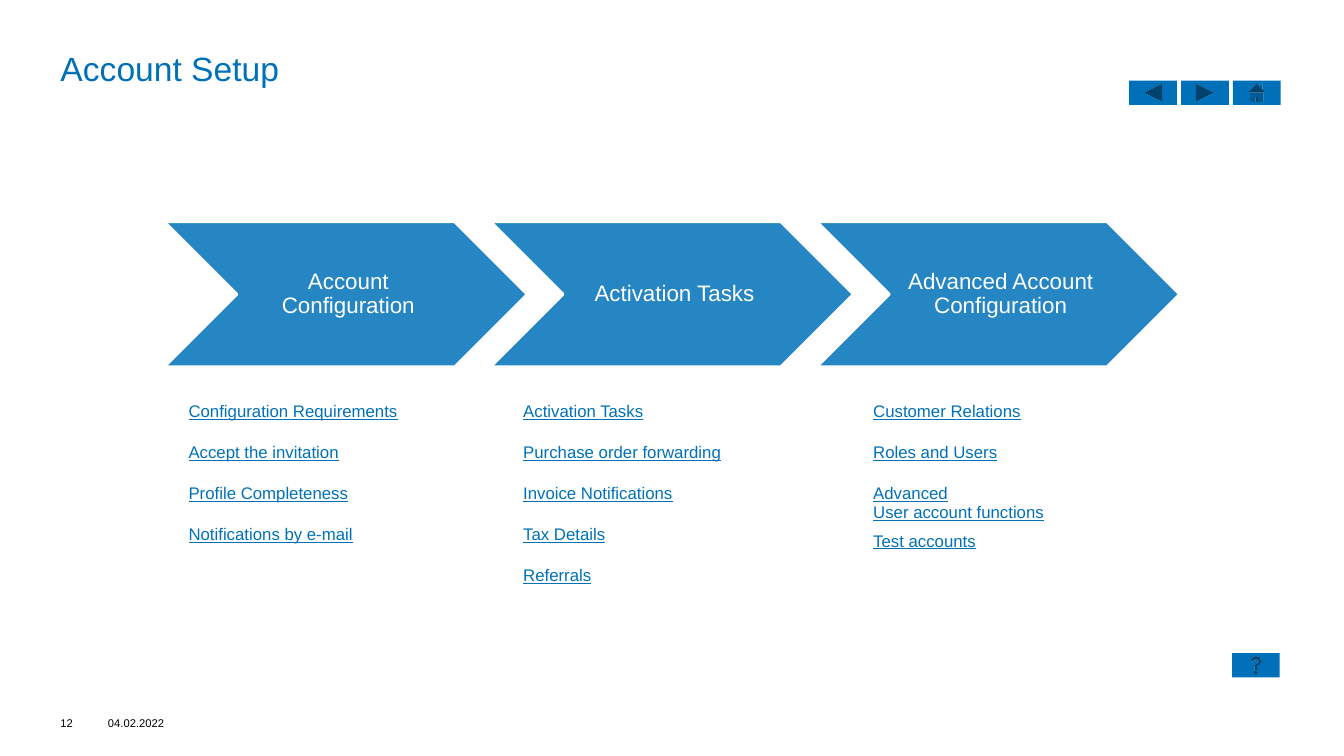
from pptx import Presentation
from pptx.dml.color import RGBColor
from pptx.enum.shapes import MSO_SHAPE as Shape
from pptx.enum.text import MSO_ANCHOR as Anchor, MSO_AUTO_SIZE as Fit, PP_ALIGN as Align
from pptx.util import Inches, Pt

BLUE = RGBColor(0x00, 0x71, 0xB9)
SKY = RGBColor(0x25, 0x86, 0xC3)
WHITE = RGBColor(0xFF, 0xFF, 0xFF)
BLACK = RGBColor(0x00, 0x00, 0x00)

WIDE, HIGH = Inches(13.33), Inches(7.5)
COLS, ROWS = 100, 75

STEPS = [
    ("Account Configuration", 13.28, [
        "Configuration Requirements", "Accept the invitation",
        "Profile Completeness", "Notifications by e-mail"]),
    ("Activation Tasks", 38.18, [
        "Activation Tasks", "Purchase order forwarding",
        "Invoice Notifications", "Tax Details", "Referrals"]),
    ("Advanced Account Configuration", 64.22, [
        "Customer Relations", "Roles and Users",
        "Advanced\nUser account functions", "Test accounts"]),
]
NAV = [Shape.ACTION_BUTTON_BACK_OR_PREVIOUS,
       Shape.ACTION_BUTTON_FORWARD_OR_NEXT,
       Shape.ACTION_BUTTON_HOME]


class Page:
    """Draws on one slide; places are columns and rows of the grid."""
    face = "Arial"

    def __init__(self, deck):
        self.slide = deck.slides.add_slide(deck.slide_layouts[5])
        self.shapes = self.slide.shapes

    def across(self, cols):
        return round(WIDE * cols / COLS)

    def down(self, rows):
        return round(HIGH * rows / ROWS)

    def area(self, x, y, w, h):
        return self.across(x), self.down(y), self.across(w), self.down(h)

    def label(self, frame, text, size, color, align=Align.LEFT, line=False):
        for i, words in enumerate(text.split("\n")):
            para = frame.add_paragraph() if i else frame.paragraphs[0]
            para.alignment = align
            run = para.add_run()
            run.text = words
            font = run.font
            font.name, font.size, font.underline = self.face, Pt(size), line
            font.color.rgb = color

    def setup(self, frame, anchor, left=0, edge=0):
        frame.word_wrap = True
        frame.auto_size = Fit.NONE
        frame.vertical_anchor = anchor
        frame.margin_left = Inches(left)
        frame.margin_top = frame.margin_right = frame.margin_bottom = Inches(edge)

    def title(self, text, *place):
        head = self.shapes.title
        head.left, head.top, head.width, head.height = self.area(*place)
        self.setup(head.text_frame, Anchor.MIDDLE)
        self.label(head.text_frame, text, 24, BLUE)

    def note(self, text, *place):
        box = self.shapes.add_textbox(*self.area(*place))
        self.setup(box.text_frame, Anchor.BOTTOM)
        self.label(box.text_frame, text, 8, BLACK)

    def block(self, kind, fill, *place):
        item = self.shapes.add_shape(kind, *self.area(*place))
        item.shadow.inherit = False
        item.fill.solid()
        item.fill.fore_color.rgb = fill
        item.line.fill.background()
        return item

    def arrow(self, text, *place):
        item = self.block(Shape.CHEVRON, SKY, *place)
        item.line.color.rgb = WHITE
        item.line.width = Pt(2)
        self.setup(item.text_frame, Anchor.MIDDLE, 0.07, 0.02)
        self.label(item.text_frame, text, 16, WHITE, Align.CENTER)
        item.text_frame.paragraphs[0].line_spacing = 0.9

    def button(self, kind, x, y):
        self.block(kind, BLUE, x, y, 3.55, 2.4)

    def links(self, items, x, y, w, row):
        place = self.area(x, y, w, row * len(items))
        table = self.shapes.add_table(len(items), 1, *place).table
        table.first_row = table.horz_banding = False
        for i, text in enumerate(items):
            table.rows[i].height = self.down(row)
            cell = table.cell(i, 0)
            cell.fill.background()
            self.label(cell.text_frame, text, 12, BLUE, line=True)


def main():
    deck = Presentation()
    deck.slide_width, deck.slide_height = WIDE, HIGH
    page = Page(deck)

    # Title and footer
    page.title("Account Setup", 4.5, 4.4, 90.92, 4.7)
    page.note("12", 4.5, 68.5, 2.93, 3.9)
    page.note("04.02.2022", 8.03, 68.5, 5.33, 3.9)

    # Steps, each with its list of topics
    for i, (name, left, items) in enumerate(STEPS):
        page.arrow(name, 12.23 + 24.27 * i, 22, 27, 14.4)
        page.links(items, left, 39.4, 19.5, 4.06)

    # Navigation and help buttons
    for i, kind in enumerate(NAV):
        page.button(kind, 84.02 + 3.86 * i, 8)
    page.button(Shape.ACTION_BUTTON_HELP, 91.67, 64.8)

    deck.save("out.pptx")


if __name__ == "__main__":
    main()
